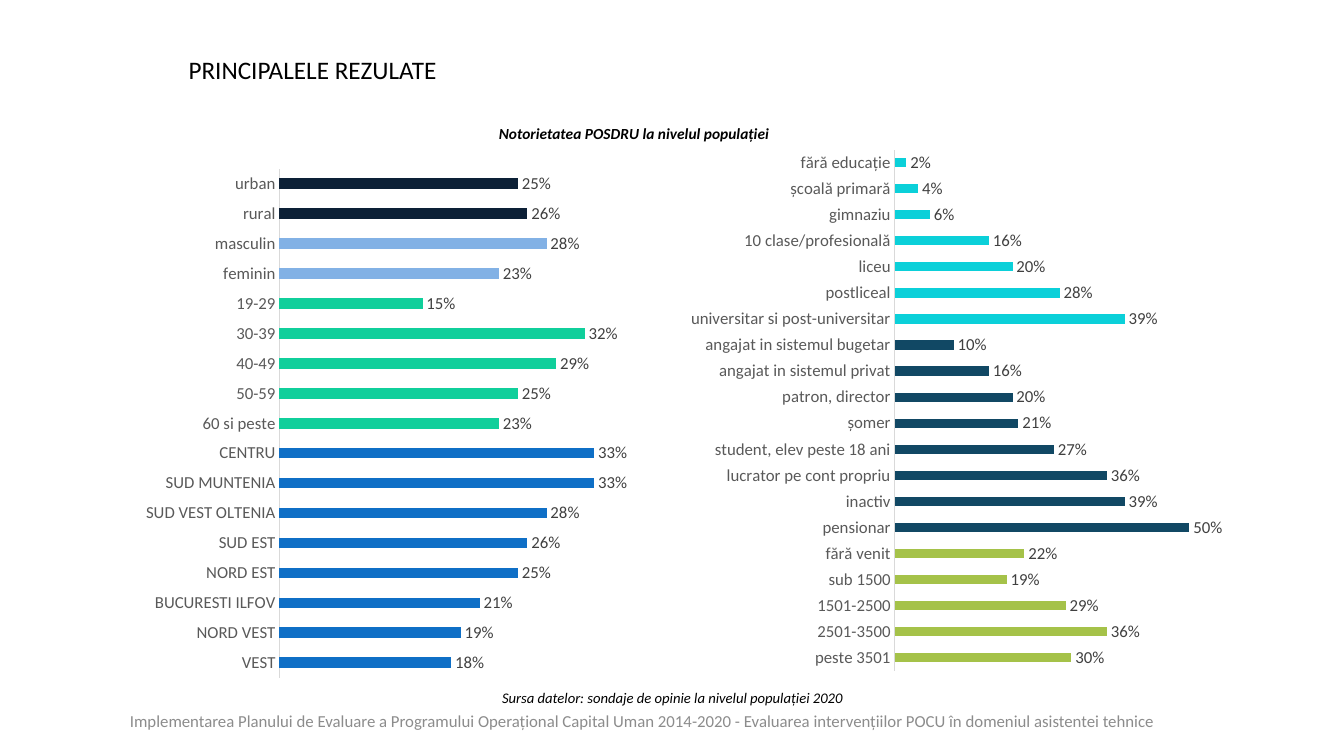
"""Builds a slide with two bar charts on programme awareness by population group."""
from lxml import etree
from pptx import Presentation
from pptx.chart.data import CategoryChartData
from pptx.dml.color import RGBColor
from pptx.enum.chart import XL_CHART_TYPE, XL_LABEL_POSITION, XL_TICK_MARK
from pptx.enum.text import MSO_ANCHOR, MSO_AUTO_SIZE, PP_ALIGN
from pptx.oxml.ns import qn
from pptx.util import Inches, Pt

BAR = XL_CHART_TYPE.BAR_CLUSTERED
OUTSIDE_END = XL_LABEL_POSITION.OUTSIDE_END
NO_TICK = XL_TICK_MARK.NONE
TOP, MIDDLE = MSO_ANCHOR.TOP, MSO_ANCHOR.MIDDLE
LEFT, CENTER, RIGHT = PP_ALIGN.LEFT, PP_ALIGN.CENTER, PP_ALIGN.RIGHT
NO_AUTOFIT = MSO_AUTO_SIZE.NONE

FONT = "Calibri"
BLACK = RGBColor(0x00, 0x00, 0x00)
FOOTER_GRAY = RGBColor(0x8C, 0x8C, 0x8C)
CATEGORY_GRAY = RGBColor(0x59, 0x59, 0x59)
VALUE_GRAY = RGBColor(0x40, 0x40, 0x40)
AXIS_GRAY = RGBColor(0xD9, 0xD9, 0xD9)
NAVY = RGBColor(0x0C, 0x20, 0x36)
SKY = RGBColor(0x82, 0xB1, 0xE5)
MINT = RGBColor(0x10, 0xCF, 0x9B)
BLUE = RGBColor(0x0F, 0x6F, 0xC6)
CYAN = RGBColor(0x0B, 0xD0, 0xD9)
PETROL = RGBColor(0x11, 0x48, 0x64)
GREEN = RGBColor(0xA5, 0xC2, 0x49)

DEMOGRAPHICS = [
    (NAVY, [("urban", 0.25), ("rural", 0.26)]),
    (SKY, [("masculin", 0.28), ("feminin", 0.23)]),
    (MINT, [("19-29", 0.15), ("30-39", 0.32), ("40-49", 0.29),
            ("50-59", 0.25), ("60 si peste", 0.23)]),
    (BLUE, [("CENTRU", 0.33), ("SUD MUNTENIA", 0.33), ("SUD VEST OLTENIA", 0.28),
            ("SUD EST", 0.26), ("NORD EST", 0.25), ("BUCURESTI ILFOV", 0.21),
            ("NORD VEST", 0.19), ("VEST", 0.18)]),
]
SOCIAL_STATUS = [
    (CYAN, [("fără educație", 0.02), ("școală primară", 0.04), ("gimnaziu", 0.06),
            ("10 clase/profesională", 0.16), ("liceu", 0.2), ("postliceal", 0.28),
            ("universitar si post-universitar", 0.39)]),
    (PETROL, [("angajat in sistemul bugetar", 0.1), ("angajat in sistemul privat", 0.16),
              ("patron, director", 0.2), ("șomer", 0.21),
              ("student, elev peste 18 ani", 0.27), ("lucrator pe cont propriu", 0.36),
              ("inactiv", 0.39), ("pensionar", 0.5)]),
    (GREEN, [("fără venit", 0.22), ("sub 1500", 0.19), ("1501-2500", 0.29),
             ("2501-3500", 0.36), ("peste 3501", 0.3)]),
]


def style_font(font, size, color, bold=False, italic=False):
    """Set the typeface, size, colour and emphasis of a font."""
    font.name = FONT
    font.size = Pt(size)
    font.color.rgb = color
    font.bold = bold
    font.italic = italic


def write_line(frame, text, size, color, align, anchor=TOP, bold=False, italic=False):
    """Write a single styled run into a text frame."""
    frame.word_wrap = True
    frame.auto_size = NO_AUTOFIT
    frame.vertical_anchor = anchor
    paragraph = frame.paragraphs[0]
    paragraph.alignment = align
    run = paragraph.add_run()
    run.text = text
    style_font(run.font, size, color, bold, italic)


def place_title(slide, box, text):
    """Move the title placeholder into the box and fill it."""
    title = slide.shapes.title
    title.left, title.top, title.width, title.height = map(Inches, box)
    write_line(title.text_frame, text, 18, BLACK, LEFT)


def add_caption(slide, box, text, size, color, align, **style):
    """Add a one-line text box."""
    caption = slide.shapes.add_textbox(*map(Inches, box))
    write_line(caption.text_frame, text, size, color, align, **style)


def set_plot_area(chart, plot):
    """Fix the inner plot area as fractions of the chart."""
    plot_area = chart.plots[0]._element.getparent()
    for old_layout in plot_area.findall(qn("c:layout")):
        plot_area.remove(old_layout)
    layout = etree.Element(qn("c:layout"))
    manual = etree.SubElement(layout, qn("c:manualLayout"))
    settings = [("layoutTarget", "inner"), ("xMode", "edge"), ("yMode", "edge")]
    for tag, value in settings + list(zip("xywh", plot)):
        etree.SubElement(manual, qn(f"c:{tag}")).set("val", str(value))
    plot_area.insert(0, layout)


def add_awareness_chart(slide, box, groups, plot, maximum):
    """Add a bar chart whose bars are coloured by population group."""
    bars = [(color, *row) for color, rows in groups for row in rows]
    colors, categories, shares = zip(*bars)
    data = CategoryChartData(number_format="0%")
    data.categories = categories
    data.add_series("Notorietate", shares)
    chart = slide.shapes.add_chart(BAR, *map(Inches, box), data).chart
    chart.has_legend = False
    chart.has_title = False
    style_font(chart.font, 10, BLACK)
    set_plot_area(chart, plot)

    groups_axis = chart.category_axis
    groups_axis.reverse_order = True
    groups_axis.major_tick_mark = NO_TICK
    groups_axis.minor_tick_mark = NO_TICK
    groups_axis.format.line.color.rgb = AXIS_GRAY
    groups_axis.format.line.width = Pt(0.75)
    style_font(groups_axis.tick_labels.font, 12, CATEGORY_GRAY)

    share_axis = chart.value_axis
    share_axis.visible = False
    share_axis.has_major_gridlines = False
    share_axis.minimum_scale = 0
    share_axis.maximum_scale = maximum

    bar_plot = chart.plots[0]
    bar_plot.gap_width = 182
    bar_plot.vary_by_categories = False
    awareness = bar_plot.series[0]
    awareness.format.fill.solid()
    awareness.format.fill.fore_color.rgb = BLUE
    for index, color in enumerate(colors):
        fill = awareness.points[index].format.fill
        fill.solid()
        fill.fore_color.rgb = color

    labels = awareness.data_labels
    labels.show_value = True
    labels.number_format = "0%"
    labels.number_format_is_linked = False
    labels.position = OUTSIDE_END
    style_font(labels.font, 12, VALUE_GRAY)


def build_results_slide(prs):
    """Add the slide with the main results."""
    slide = prs.slides.add_slide(prs.slide_layouts[5])
    place_title(slide, (1.77, 0.49, 7.17, 0.4), "PRINCIPALELE REZULATE")
    add_awareness_chart(slide, (1.36, 1.57, 4.87, 5.26), DEMOGRAPHICS,
                        (0.29, 0.02, 0.68, 0.96), 0.35)
    add_awareness_chart(slide, (6.65, 1.32, 5.85, 5.5), SOCIAL_STATUS,
                        (0.38, 0.03, 0.6, 0.94), 0.6)
    add_caption(slide, (3.79, 1.18, 5, 0.29), "Notorietatea POSDRU la nivelul populației",
                11, BLACK, CENTER, bold=True, italic=True)
    add_caption(slide, (4.11, 6.78, 4.35, 0.28),
                "Sursa datelor: sondaje de opinie la nivelul populației 2020",
                10.5, BLACK, RIGHT, italic=True)
    add_caption(slide, (1.19, 6.97, 11.16, 0.37),
                "Implementarea Planului de Evaluare a Programului Operațional Capital Uman "
                "2014-2020 - Evaluarea intervențiilor POCU în domeniul asistentei tehnice",
                12, FOOTER_GRAY, LEFT, anchor=MIDDLE)


def main():
    """Create and save the presentation."""
    prs = Presentation()
    prs.slide_width = Inches(13.33)
    prs.slide_height = Inches(7.5)
    build_results_slide(prs)
    prs.save("out.pptx")


if __name__ == "__main__":
    main()
